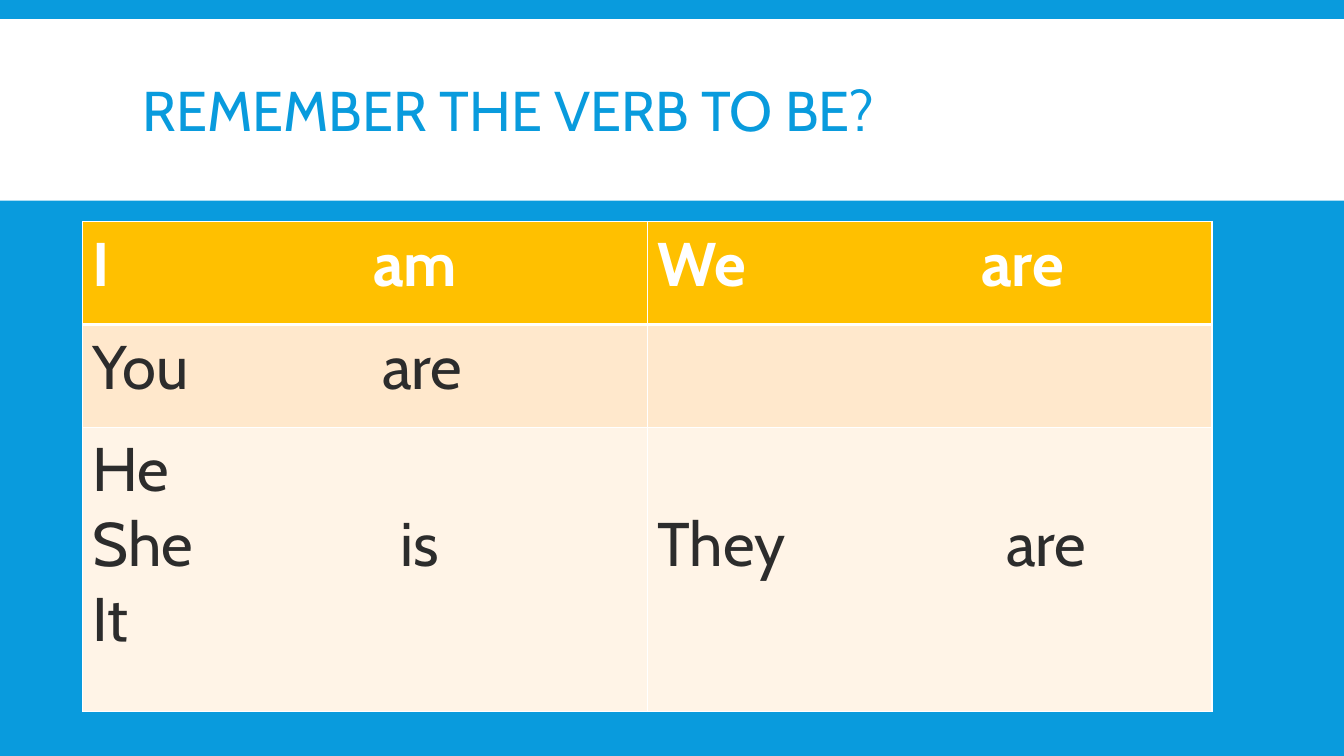
"""Build a slide with a table of the verb to be."""
from dataclasses import dataclass

from lxml.etree import SubElement
from pptx import Presentation
from pptx.dml.color import RGBColor
from pptx.enum.shapes import MSO_SHAPE
from pptx.enum.text import MSO_ANCHOR
from pptx.oxml.ns import qn
from pptx.util import Inches, Pt


@dataclass(frozen=True)
class Theme:
    font: str = "Cabin"
    blue: str = "099BDD"
    white: str = "FFFFFF"
    ink: str = "2C2C2C"
    row_fills: tuple = ("FFC000", "FFE8CC", "FFF4E7")
    title_size: int = 40
    table_size: int = 44


theme = Theme()


def style_runs(para, size, color, bold=False):
    for span in para.runs:
        span.font.name = theme.font
        span.font.size = Pt(size)
        span.font.bold = bold
        span.font.color.rgb = RGBColor.from_string(color)


def add_border(cell, side, width):
    line = SubElement(cell._tc.get_or_add_tcPr(), qn(f"a:ln{side}"), w=str(Pt(width)))
    fill = SubElement(line, qn("a:solidFill"))
    SubElement(fill, qn("a:srgbClr"), val=theme.white)


deck = Presentation()
deck.slide_width, deck.slide_height = Inches(13.33), Inches(7.5)
page = deck.slides.add_slide(deck.slide_layouts[6])
page.background.fill.solid()
page.background.fill.fore_color.rgb = RGBColor.from_string(theme.blue)

band = page.shapes.add_shape(
    MSO_SHAPE.RECTANGLE, Inches(0), Inches(0.19), Inches(13.33), Inches(1.8))
band.shadow.inherit = False
band.fill.solid()
band.fill.fore_color.rgb = RGBColor.from_string(theme.white)
band.line.fill.background()

title = page.shapes.add_textbox(Inches(1.32), Inches(0.31), Inches(10.7), Inches(1.65))
title.text_frame.word_wrap = True
title.text_frame.vertical_anchor = MSO_ANCHOR.MIDDLE
title.text_frame.text = "REMEMBER THE VERB TO BE?"
title.text_frame.paragraphs[0].line_spacing = 0.85
style_runs(title.text_frame.paragraphs[0], theme.title_size, theme.blue)

verb_rows = [
    [("I\tam", 2.78), ("We\tare", 3.21)],
    [("You\tare", 2.87), ("", 0)],
    [("He\nShe\tis\nIt", 3.05), ("They\tare", 3.46)],
]
row_heights = [1.02, 1.02, 2.82]
verb_table = page.shapes.add_table(
    3, 2, Inches(0.82), Inches(2.2), Inches(11.2), Inches(sum(row_heights))).table
for column in verb_table.columns:
    column.width = Inches(5.6)

for row_index, verb_row in enumerate(verb_rows):
    verb_table.rows[row_index].height = Inches(row_heights[row_index])
    is_header = row_index == 0
    for column_index, (text, verb_left) in enumerate(verb_row):
        cell = verb_table.cell(row_index, column_index)
        for side in "LRTB":
            under_header = (row_index, side) in [(0, "B"), (1, "T")]
            add_border(cell, side, 3 if under_header else 1)
        cell.fill.solid()
        cell.fill.fore_color.rgb = RGBColor.from_string(theme.row_fills[row_index])
        cell.text_frame.text = text
        for para in cell.text_frame.paragraphs:
            style_runs(para, theme.table_size, theme.white if is_header else theme.ink, is_header)
            if "\t" in para.text:
                tabs = SubElement(para._p.get_or_add_pPr(), qn("a:tabLst"))
                SubElement(tabs, qn("a:tab"), pos=str(Inches(verb_left)), algn="l")

verb_table.cell(2, 1).margin_top = Inches(0.79)

deck.save("out.pptx")
